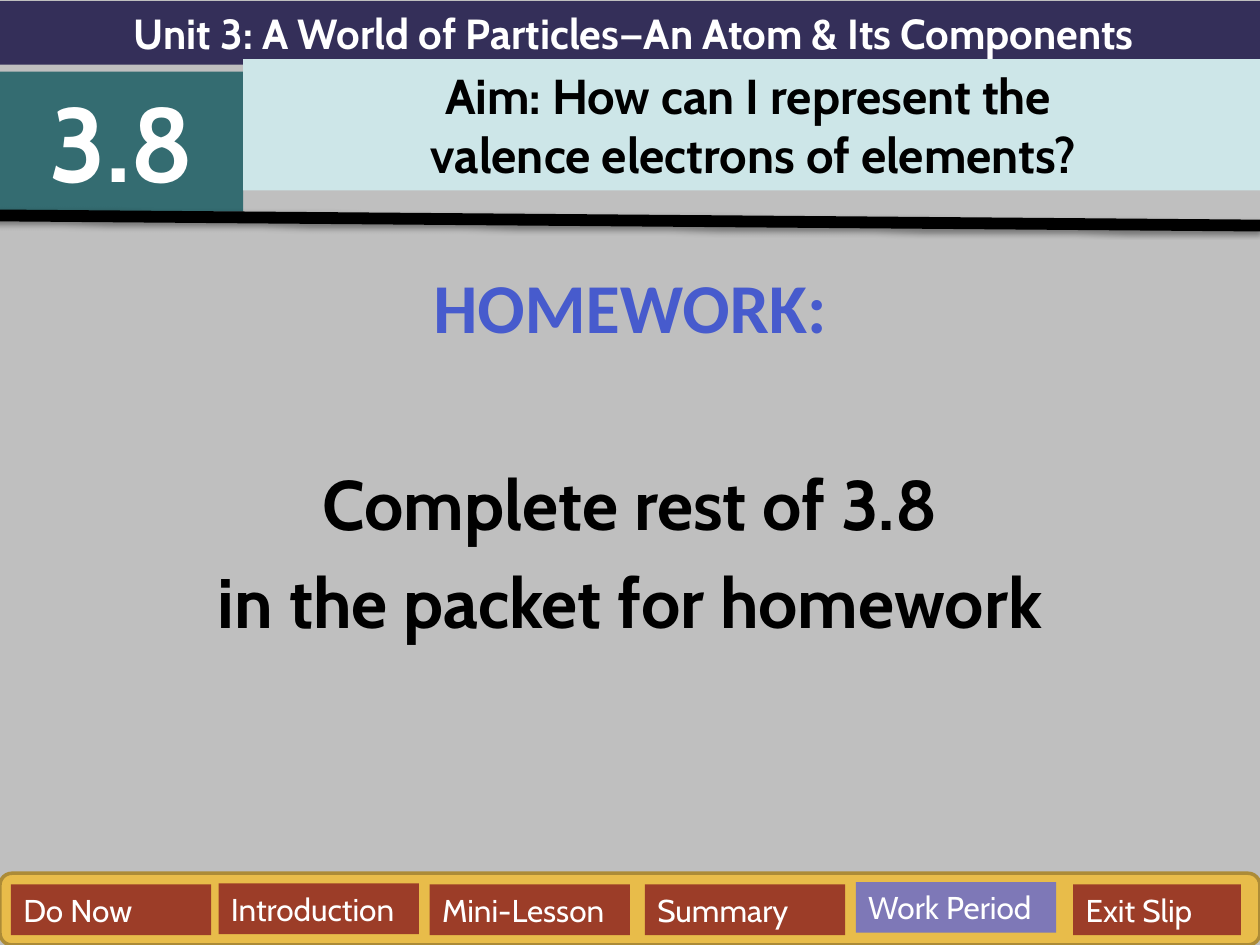
"""Build the homework slide for lesson 3.8."""
from dataclasses import dataclass

from lxml.etree import SubElement
from pptx import Presentation
from pptx.dml.color import RGBColor as Rgb
from pptx.enum.shapes import MSO_CONNECTOR as Link, MSO_SHAPE as Form
from pptx.enum.text import MSO_ANCHOR as Anchor, MSO_AUTO_SIZE as Fit, PP_ALIGN as Align
from pptx.oxml.ns import qn
from pptx.slide import Slide
from pptx.util import Pt


@dataclass(frozen=True)
class Theme:
    page: str = "BFBFBF"
    unit: str = "342F59"
    badge: str = "346C71"
    aim: str = "CDE6E8"
    bar: str = "E8BC4A"
    edge: str = "AC8B37"
    tab: str = "9C3D28"
    live: str = "7E78B7"
    head: str = "475BCD"
    dark: str = "000000"
    light: str = "FFFFFF"
    font: str = "Cabin"
    head_font: str = "Calibri"
    tab_size: int = 18
    unit_size: int = 24
    aim_size: int = 28
    body_size: int = 40
    badge_size: int = 60


@dataclass(frozen=True)
class Line:
    text: str
    size: int
    ink: str
    font: str = "Cabin"
    bold: bool = True
    align: Align = Align.CENTER
    gap: float = 0


@dataclass(frozen=True)
class Box:
    left: float
    top: float
    width: float
    height: float
    fill: str | None = None
    lines: tuple[Line, ...] = ()
    form: Form = Form.RECTANGLE
    edge: str | None = None


@dataclass(frozen=True)
class Tab:
    name: str
    left: float
    top: float = 505.4
    width: float = 114.5
    fill: str = Theme.tab


def apply(item: object, values: dict) -> None:
    for name, value in values.items():
        setattr(item, name, value)


def write(frame, lines: tuple[Line, ...]) -> None:
    apply(frame, {"word_wrap": True, "auto_size": Fit.NONE, "vertical_anchor": Anchor.TOP})
    for index, line in enumerate(lines):
        para = frame.add_paragraph() if index else frame.paragraphs[0]
        apply(para, {"alignment": line.align, "space_before": Pt(line.gap)})
        run = para.add_run()
        run.text = line.text
        apply(run.font, {"name": line.font, "size": Pt(line.size), "bold": line.bold})
        run.font.color.rgb = Rgb.from_string(line.ink)


def draw_box(slide: Slide, box: Box) -> None:
    place = [Pt(side) for side in (box.left, box.top, box.width, box.height)]
    if box.fill is None:
        shape = slide.shapes.add_textbox(*place)
    else:
        shape = slide.shapes.add_shape(box.form, *place)
        shape.shadow.inherit = False
        shape.fill.solid()
        shape.fill.fore_color.rgb = Rgb.from_string(box.fill)
        if box.edge:
            shape.line.color.rgb = Rgb.from_string(box.edge)
            shape.line.width = Pt(2)
        else:
            shape.line.fill.background()
    if box.lines:
        write(shape.text_frame, box.lines)


def draw_tab(slide: Slide, tab: Tab) -> None:
    label = Line(tab.name, Theme.tab_size, Theme.light, bold=False, align=Align.LEFT)
    draw_box(slide, Box(tab.left, tab.top, tab.width, 29, tab.fill, (label,)))


def draw_rule(slide: Slide, theme: Theme) -> None:
    ends = [Pt(side) for side in (-3.6, 123.1, 720, 128.9)]
    rule = slide.shapes.add_connector(Link.STRAIGHT, *ends)
    rule.line.color.rgb = Rgb.from_string(theme.dark)
    rule.line.width = Pt(6.75)
    effects = SubElement(rule._element.spPr, qn("a:effectLst"))
    form = {"blurRad": Pt(3.1), "dist": Pt(1.6), "dir": 5400000, "rotWithShape": 0}
    shade = SubElement(effects, qn("a:outerShdw"), {key: str(int(val)) for key, val in form.items()})
    ink = SubElement(shade, qn("a:srgbClr"), val=theme.dark)
    SubElement(ink, qn("a:alpha"), val="38000")


def main() -> None:
    theme = Theme()
    deck = Presentation()
    apply(deck, {"slide_width": Pt(720), "slide_height": Pt(540)})
    slide = deck.slides.add_slide(deck.slide_layouts[6])
    slide.background.fill.solid()
    slide.background.fill.fore_color.rgb = Rgb.from_string(theme.page)

    body = (
        Line("HOMEWORK:", theme.body_size, theme.head, theme.head_font, gap=8),
        Line("Complete rest of 3.8", theme.body_size, theme.dark, gap=64.8),
        Line("in the packet for homework", theme.body_size, theme.dark, gap=8),
    )
    unit = Line("Unit 3: A World of Particles—An Atom & Its Components", theme.unit_size, theme.light)
    badge = Line("3.8", theme.badge_size, theme.light)
    aim = tuple(
        Line(text, theme.aim_size, theme.dark)
        for text in ("Aim: How can I represent the ", "valence electrons of elements?")
    )
    for box in (
        Box(0, 146.9, 720, 393.1, lines=body),
        Box(0, 0.7, 724.3, 36.3, theme.unit, (unit,)),
        Box(0, 41, 139, 80, theme.badge, (badge,)),
        Box(139, 33.8, 583.2, 75, theme.aim, aim),
    ):
        draw_box(slide, box)
    draw_rule(slide, theme)
    draw_box(slide, Box(0, 499, 720, 41, theme.bar, form=Form.ROUNDED_RECTANGLE, edge=theme.edge))
    for tab in (
        Tab("Do Now", 6.2),
        Tab("Introduction", 124.9, 504.8),
        Tab("Mini-Lesson", 245.5),
        Tab("Summary", 368.5),
        Tab("Work Period", 489, 504, fill=theme.live),
        Tab("Exit Slip", 613.3, width=95.8),
    ):
        draw_tab(slide, tab)
    deck.save("out.pptx")


if __name__ == "__main__":
    main()
